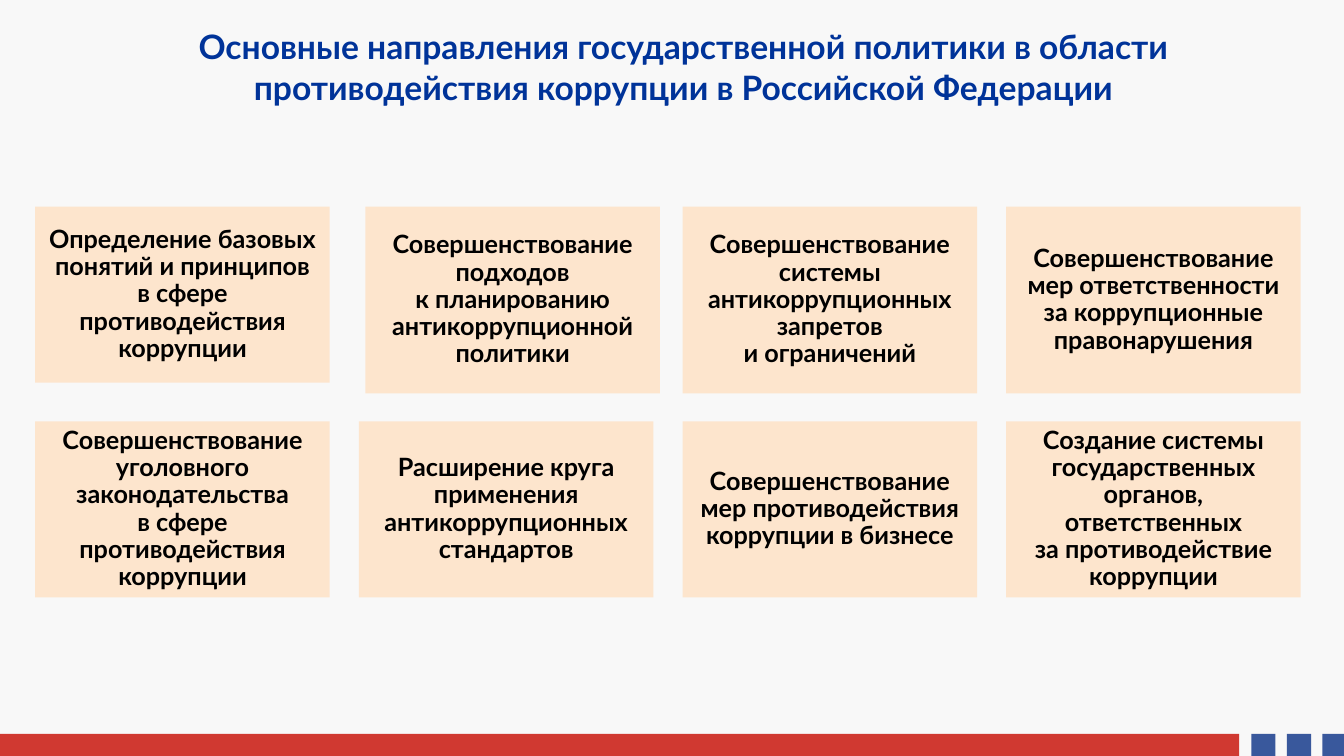
from dataclasses import dataclass

from lxml.etree import SubElement
from pptx import Presentation
from pptx.dml.color import RGBColor
from pptx.enum.shapes import MSO_SHAPE
from pptx.enum.text import MSO_ANCHOR, PP_ALIGN
from pptx.oxml.ns import qn
from pptx.util import Inches, Pt


@dataclass(frozen=True)
class Theme:
    font: str = "Lato"
    background: str = "F8F8F8"
    card: str = "FDE5CD"
    bar: str = "C70A00"
    square: str = "0A3085"
    title: str = "003399"
    text: str = "000000"
    title_size: int = 24
    card_size: int = 18
    footer_opacity: int = 80


class SlideBuilder:
    """Draws themed elements on a slide, placed by grid cells or by percent."""

    left, top = 0.35, 2.05
    column, row = 3.21, 2.13

    def __init__(self, prs, theme):
        self.prs, self.theme = prs, theme
        self.s = prs.slides.add_slide(prs.slide_layouts[6])
        fill = self.s.background.fill
        fill.solid()
        fill.fore_color.rgb = RGBColor.from_string(theme.background)

    def percent(self, x, y, w, h):
        width, height = self.prs.slide_width, self.prs.slide_height
        return [round(share * side / 100)
                for share, side in zip((x, y, w, h), (width, height) * 2)]

    def cells(self, x, y, w, h):
        return [Inches(n) for n in (self.left + x * self.column, self.top + y * self.row,
                                    w * self.column, h * self.row)]

    def rect(self, box, color, opacity=100):
        sp = self.s.shapes.add_shape(MSO_SHAPE.RECTANGLE, *box)
        sp.shadow.inherit = False
        sp.line.fill.background()
        sp.fill.solid()
        sp.fill.fore_color.rgb = RGBColor.from_string(color)
        if opacity < 100:
            clr = sp.element.spPr.find(qn("a:solidFill"))[0]
            SubElement(clr, qn("a:alpha"), val=str(opacity * 1000))
        return sp

    def text(self, tf, text, size, color, spacing=1.0):
        tf.word_wrap = True
        p = tf.paragraphs[0]
        p.alignment = PP_ALIGN.CENTER
        p.line_spacing = spacing
        for i, line in enumerate(text.split("\n")):
            if i:
                p.add_line_break()
            r = p.add_run()
            r.text = line
            r.font.name = self.theme.font
            r.font.size = Pt(size)
            r.font.bold = True
            r.font.color.rgb = RGBColor.from_string(color)

    def title(self, text):
        tb = self.s.shapes.add_textbox(*self.percent(9.3, 2.8, 83.1, 12.1))
        self.text(tb.text_frame, text, self.theme.title_size, self.theme.title)

    def card(self, text, column, row, height):
        sp = self.rect(self.cells(column, row, 0.91, height), self.theme.card)
        tf = sp.text_frame
        tf.vertical_anchor = MSO_ANCHOR.MIDDLE
        tf.margin_left = tf.margin_right = tf.margin_top = tf.margin_bottom = Inches(0.07)
        self.text(tf, text, self.theme.card_size, self.theme.text, 0.9)

    def footer(self):
        y, h = 97.07, 2.93
        opacity = self.theme.footer_opacity
        self.rect(self.percent(0, y, 92.2, h), self.theme.bar, opacity)
        for i in range(3):
            x = 93.1 + i * 2.65
            self.rect(self.percent(x, y, min(1.8, 100 - x), h), self.theme.square, opacity)


CARDS = [
    ("Определение базовых понятий и принципов\nв сфере противодействия коррупции", 0, 0, 0.82),
    ("Совершенствование подходов\nк планированию антикоррупционной политики", 1.02, 0, 0.87),
    ("Совершенствование системы антикоррупционных запретов\nи ограничений", 2, 0, 0.87),
    ("Совершенствование мер ответственности\nза коррупционные правонарушения", 3, 0, 0.87),
    ("Совершенствование уголовного законодательства\nв сфере противодействия коррупции",
     0, 1, 0.82),
    ("Расширение круга применения антикоррупционных стандартов", 1, 1, 0.82),
    ("Совершенствование мер противодействия коррупции в бизнесе", 2, 1, 0.82),
    ("Создание системы государственных органов, ответственных\nза противодействие коррупции",
     3, 1, 0.82),
]


def main():
    prs = Presentation()
    prs.slide_width, prs.slide_height = Inches(13.33), Inches(7.5)
    slide = SlideBuilder(prs, Theme())
    slide.footer()
    for card in CARDS:
        slide.card(*card)
    slide.title("Основные направления государственной политики в области "
                "противодействия коррупции в Российской Федерации")
    prs.save("out.pptx")


if __name__ == "__main__":
    main()
